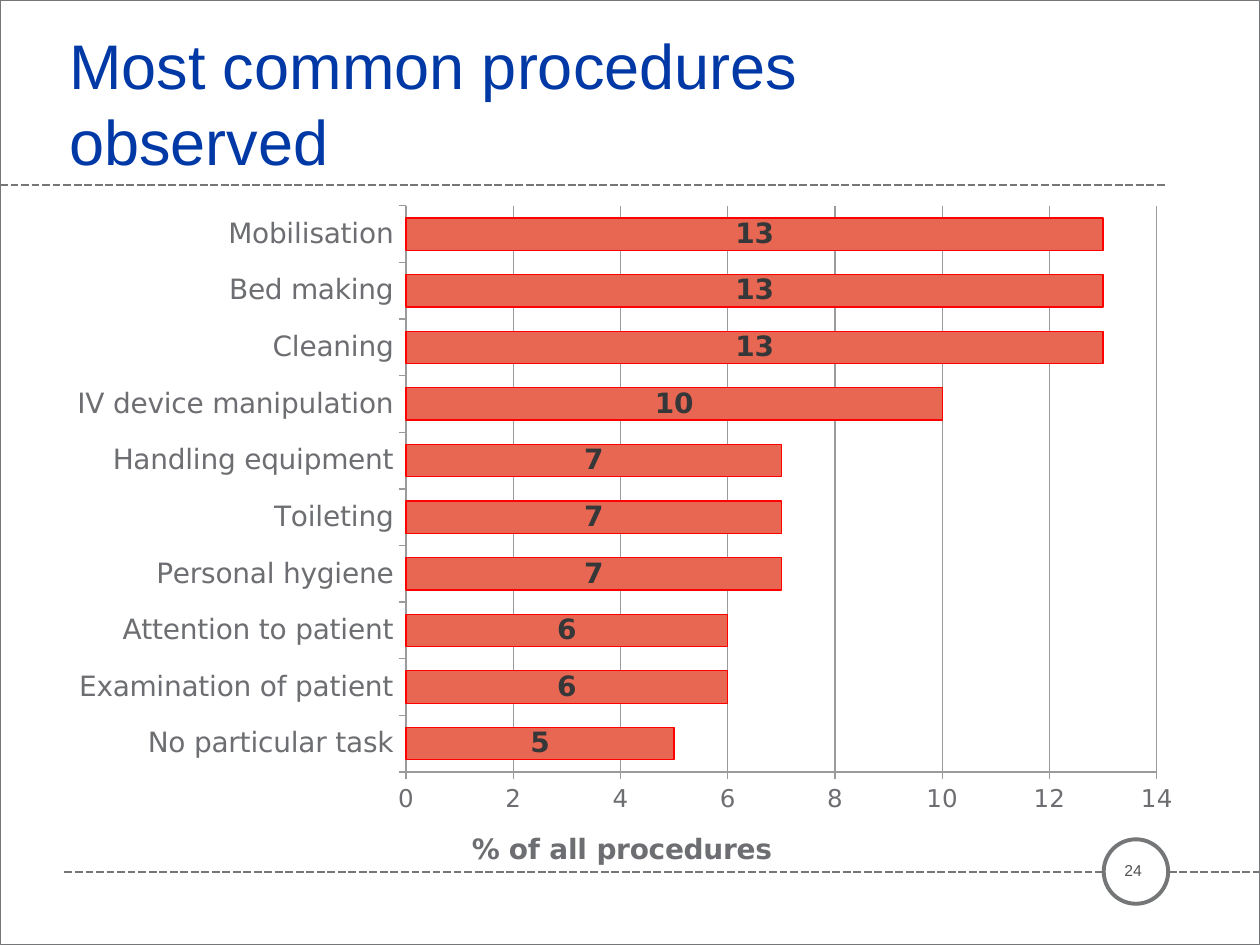
from lxml import etree
from pptx import Presentation
from pptx.chart.data import CategoryChartData
from pptx.dml.color import RGBColor
from pptx.enum.chart import XL_CHART_TYPE, XL_LABEL_POSITION, XL_TICK_MARK
from pptx.enum.dml import MSO_LINE
from pptx.enum.shapes import MSO_CONNECTOR, MSO_SHAPE
from pptx.enum.text import MSO_ANCHOR, MSO_AUTO_SIZE, PP_ALIGN
from pptx.oxml.ns import qn
from pptx.util import Cm, Pt

BAR_STACKED = XL_CHART_TYPE.BAR_STACKED
CENTER_LABEL = XL_LABEL_POSITION.CENTER
TICK_OUT = XL_TICK_MARK.OUTSIDE
SYS_DASH = MSO_LINE.SQUARE_DOT
STRAIGHT = MSO_CONNECTOR.STRAIGHT
OVAL, RECT = MSO_SHAPE.OVAL, MSO_SHAPE.RECTANGLE
BOTTOM, MIDDLE = MSO_ANCHOR.BOTTOM, MSO_ANCHOR.MIDDLE
NO_FIT = MSO_AUTO_SIZE.NONE
LEFT, CENTER = PP_ALIGN.LEFT, PP_ALIGN.CENTER

COLORS = {"title": "0039A6", "rule": "747678", "number": "525355",
          "axis": "6D6E71", "grid": "9B9B9B", "bar": "E86752",
          "bar_line": "FF0000", "label": "363739", "paper": "FFFFFF"}

TITLE = "Most common procedures observed"
PAGE = "24"
AXIS_TITLE = "% of all procedures"
PROCEDURES = [
    ("No particular task", 5),
    ("Examination of patient", 6),
    ("Attention to patient", 6),
    ("Personal hygiene", 7),
    ("Toileting", 7),
    ("Handling equipment", 7),
    ("IV device manipulation", 10),
    ("Cleaning", 13),
    ("Bed making", 13),
    ("Mobilisation", 13),
]
WIDTH, HEIGHT = 25.4, 19.05
RULES = [(0, 23.5, 3.73), (1.3, WIDTH, 17.58)]
OUTLINES = [
    (RECT, (0, 0, WIDTH, HEIGHT), 0.5, None),
    (OVAL, (22.25, 16.92, 1.3, 1.3), 2.25, "paper"),
]
TITLE_BOX = (1.14, 1.35, 19.35, 2.36)
PAGE_BOX = (22.3, 16.97, 1.09, 1.14)
CHART_BOX = (1.09, 3.94, 23.11, 13.97)
PLOT = {"layoutTarget": "inner", "xMode": "edge", "yMode": "edge",
        "x": 0.307, "y": 0.015, "w": 0.655, "h": 0.817}
AXIS_TITLE_PLACE = {"xMode": "edge", "yMode": "edge", "x": 0.36, "y": 0.91}


def rgb(name):
    return RGBColor.from_string(COLORS[name])


def cm(box):
    return [Cm(v) for v in box]


def set_font(font, color, **values):
    for key, value in values.items():
        setattr(font, key, value)
    font.color.rgb = rgb(color)


def set_line(line, color, width):
    line.color.rgb = rgb(color)
    line.width = Pt(width)


def set_layout(parent, values, before):
    for old in parent.findall(qn("c:layout")):
        parent.remove(old)
    layout = etree.Element(qn("c:layout"))
    manual = etree.SubElement(layout, qn("c:manualLayout"))
    for key, value in values.items():
        etree.SubElement(manual, qn("c:" + key)).set("val", str(value))
    parent.find(qn("c:" + before)).addprevious(layout)


def write(sp, text, anchor, align, color, size):
    tf = sp.text_frame
    for key, value in {"text": text, "word_wrap": True, "auto_size": NO_FIT,
                       "vertical_anchor": anchor}.items():
        setattr(tf, key, value)
    p = tf.paragraphs[0]
    p.alignment = align
    set_font(p.runs[0].font, color, name="Arial", size=Pt(size))
    return tf


def add_frame(s):
    for x1, x2, y in RULES:
        rule = s.shapes.add_connector(STRAIGHT, *cm((x1, y, x2, y)))
        set_line(rule.line, "rule", 1.5)
        rule.line.dash_style = SYS_DASH
        etree.SubElement(rule._element.spPr, qn("a:effectLst"))
    for kind, box, width, fill in OUTLINES:
        sp = s.shapes.add_shape(kind, *cm(box))
        sp.shadow.inherit = False
        if fill:
            sp.fill.solid()
            sp.fill.fore_color.rgb = rgb(fill)
        else:
            sp.fill.background()
        set_line(sp.line, "rule", width)


def add_procedure_chart(s):
    data = CategoryChartData()
    data.categories = [name for name, _ in PROCEDURES]
    data.add_series("Series 1", [value for _, value in PROCEDURES])
    chart = s.shapes.add_chart(BAR_STACKED, *cm(CHART_BOX), data).chart
    chart.has_legend = False
    chart.has_title = False
    set_font(chart.font, "axis", name="DejaVu Sans", size=Pt(10))

    plot = chart.plots[0]
    for key, value in {"gap_width": 75, "overlap": -29,
                       "vary_by_categories": False,
                       "has_data_labels": True}.items():
        setattr(plot, key, value)
    labels = plot.data_labels
    labels.show_value = True
    labels.position = CENTER_LABEL
    set_font(labels.font, "label", size=Pt(16), bold=True)
    bars = plot.series[0].format
    bars.fill.solid()
    bars.fill.fore_color.rgb = rgb("bar")
    set_line(bars.line, "bar_line", 0.75)

    cat, val = chart.category_axis, chart.value_axis
    for axis, size in ((cat, 16), (val, 14)):
        axis.major_tick_mark = TICK_OUT
        set_font(axis.tick_labels.font, "axis", size=Pt(size))
        set_line(axis.format.line, "grid", 0.75)
    for key, value in {"minimum_scale": 0, "maximum_scale": 14,
                       "major_unit": 2, "has_major_gridlines": True}.items():
        setattr(val, key, value)
    set_line(val.major_gridlines.format.line, "grid", 0.75)

    title = val.axis_title
    title.text_frame.text = AXIS_TITLE
    set_font(title.text_frame.paragraphs[0].runs[0].font, "axis",
             name="DejaVu Sans", size=Pt(16), bold=True)
    set_layout(title._element, AXIS_TITLE_PLACE, "overlay")
    set_layout(chart._chartSpace.chart.plotArea, PLOT, "barChart")


def main():
    prs = Presentation()
    prs.slide_width, prs.slide_height = Cm(WIDTH), Cm(HEIGHT)
    s = prs.slides.add_slide(prs.slide_layouts[5])
    title = s.shapes.title
    title.left, title.top, title.width, title.height = cm(TITLE_BOX)
    write(title, TITLE, BOTTOM, LEFT, "title", 36)
    add_frame(s)
    number = s.shapes.add_textbox(*cm(PAGE_BOX))
    tf = write(number, PAGE, MIDDLE, CENTER, "number", 9)
    tf.margin_left = tf.margin_right = Cm(0)
    add_procedure_chart(s)
    prs.save("out.pptx")


if __name__ == "__main__":
    main()
